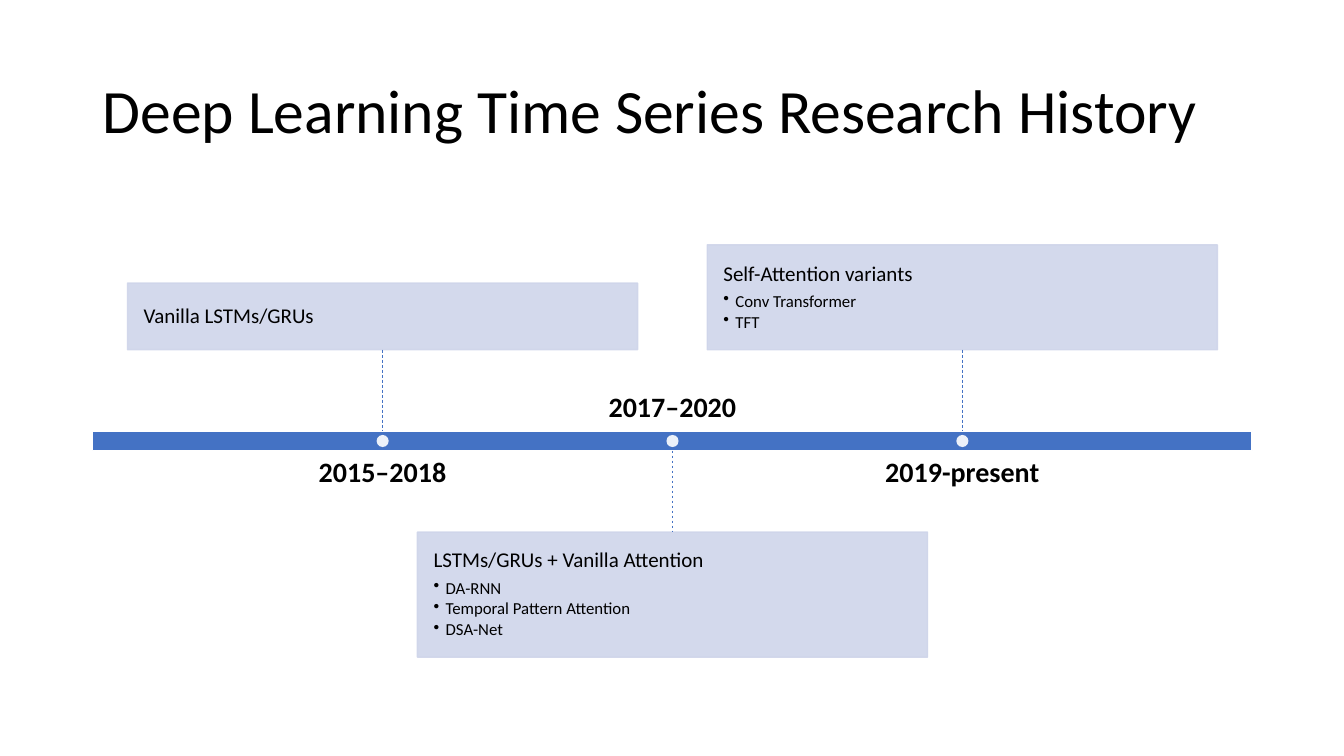
from lxml import etree
from pptx import Presentation
from pptx.dml.color import RGBColor
from pptx.enum.dml import MSO_LINE
from pptx.enum.shapes import MSO_CONNECTOR, MSO_SHAPE
from pptx.enum.text import MSO_ANCHOR, PP_ALIGN
from pptx.oxml.ns import qn
from pptx.util import Inches, Pt

RECTANGLE, OVAL = MSO_SHAPE.RECTANGLE, MSO_SHAPE.OVAL
STRAIGHT, DASH = MSO_CONNECTOR.STRAIGHT, MSO_LINE.DASH
TOP, MIDDLE, BOTTOM = MSO_ANCHOR.TOP, MSO_ANCHOR.MIDDLE, MSO_ANCHOR.BOTTOM
LEFT, CENTER = PP_ALIGN.LEFT, PP_ALIGN.CENTER
TOP_SIDE, BOTTOM_SIDE = 0, 2

FONT = "Calibri"
COLORS = {"text": "000000", "bar": "4472C4", "card": "CFD5EA", "white": "FFFFFF"}

SLIDE_WIDTH, SLIDE_HEIGHT = 13.33, 7.5
TITLE_BOX = (0.92, 0.4, 11.72, 1.45)
BAR_BOX = (0.92, 4.28, 11.5, 0.19)
CARD_WIDTH = BAR_BOX[2] * 0.44
DATE_WIDTH, DATE_HEIGHT = BAR_BOX[2] * 0.4, 0.54
DATE_GAP = 0.08
CONNECTOR_LENGTH = 0.81
DOT_SIZE = 0.12
CARD_INSET = 0.16
BULLET_INDENT = 0.12

# date, heading, bullets, card height, card above the bar
MILESTONES = [
    ("2015–2018", "Vanilla LSTMs/GRUs", [], 0.66, True),
    ("2017–2020", "LSTMs/GRUs + Vanilla Attention",
     ["DA-RNN", "Temporal Pattern Attention", "DSA-Net"], 1.24, False),
    ("2019-present", "Self-Attention variants", ["Conv Transformer", "TFT"], 1.04, True),
]


def color(name):
    return RGBColor.from_string(COLORS[name])


def set_opacity(fill_format, element, percent):
    """Make every solid colour inside the element partly transparent."""
    for solid in element.iter(qn("a:srgbClr")):
        alpha = etree.SubElement(solid, qn("a:alpha"))
        alpha.set("val", str(percent * 1000))


def add_block(slide, kind, box, fill, line=None, opacity=100):
    shape = slide.shapes.add_shape(kind, *map(Inches, box))
    shape.shadow.inherit = False
    shape.fill.solid()
    shape.fill.fore_color.rgb = color(fill)
    if line:
        shape.line.color.rgb = color(line)
        shape.line.width = Pt(1)
    else:
        shape.line.fill.background()
    if opacity < 100:
        set_opacity(shape.fill, shape.fill._xPr, opacity)
    return shape


def set_frame(text_frame, anchor, inset):
    text_frame.word_wrap = True
    text_frame.vertical_anchor = anchor
    text_frame.margin_left = text_frame.margin_right = Inches(inset)
    text_frame.margin_top = text_frame.margin_bottom = Inches(inset)


def format_paragraph(paragraph, size, space_after=0, align=LEFT, bold=False):
    paragraph.alignment = align
    paragraph.line_spacing = 0.9
    paragraph.space_before = Pt(0)
    paragraph.space_after = Pt(space_after)
    for run in paragraph.runs:
        run.font.name = FONT
        run.font.size = Pt(size)
        run.font.bold = bold
        run.font.color.rgb = color("text")


def add_bullet(paragraph):
    properties = paragraph._p.get_or_add_pPr()
    properties.set("marL", str(Inches(BULLET_INDENT)))
    properties.set("indent", str(-Inches(BULLET_INDENT)))
    etree.SubElement(properties, qn("a:buChar")).set("char", "•")


def add_label(slide, box, text, size, anchor, inset=0, **style):
    label = slide.shapes.add_textbox(*map(Inches, box))
    set_frame(label.text_frame, anchor, inset)
    label.text_frame.text = text
    format_paragraph(label.text_frame.paragraphs[0], size, **style)


def add_card(slide, box, heading, bullets):
    card = add_block(slide, RECTANGLE, box, "card", "card", opacity=90)
    set_frame(card.text_frame, MIDDLE, CARD_INSET)
    card.text_frame.text = "\n".join([heading, *bullets])
    first, *others = card.text_frame.paragraphs
    format_paragraph(first, 15, space_after=5)
    for paragraph in others:
        paragraph.level = 1
        format_paragraph(paragraph, 12, space_after=2)
        add_bullet(paragraph)
    return card


def add_dashed_line(slide, center, start, end):
    line = slide.shapes.add_connector(
        STRAIGHT, Inches(center), Inches(start), Inches(center), Inches(end))
    line.line.color.rgb = color("bar")
    line.line.width = Pt(0.5)
    line.line.dash_style = DASH
    etree.SubElement(line._element.spPr, qn("a:effectLst"))
    return line


def add_milestone(slide, bar, bar_box, share, milestone):
    """Place date, card, line and dot at a share of the bar's length."""
    date, heading, bullets, card_height, above = milestone
    left, top, width, height = bar_box
    center, bottom = left + width * share, top + height
    if above:
        line_start, line_end = top - CONNECTOR_LENGTH, top
        card_top = line_start - card_height
        date_top, date_anchor = bottom + DATE_GAP, TOP
    else:
        line_start, line_end = bottom, bottom + CONNECTOR_LENGTH
        card_top = line_end
        date_top, date_anchor = top - DATE_GAP - DATE_HEIGHT, BOTTOM

    add_label(slide, (center - DATE_WIDTH / 2, date_top, DATE_WIDTH, DATE_HEIGHT),
              date, 20, date_anchor, space_after=7, align=CENTER, bold=True)
    card = add_card(slide, (center - CARD_WIDTH / 2, card_top, CARD_WIDTH, card_height),
                    heading, bullets)
    line = add_dashed_line(slide, center, line_start, line_end)
    if above:
        line.begin_connect(card, BOTTOM_SIDE)
    else:
        line.end_connect(card, TOP_SIDE)
    if share == 0.5:
        if above:
            line.end_connect(bar, TOP_SIDE)
        else:
            line.begin_connect(bar, BOTTOM_SIDE)
    add_block(slide, OVAL, (center - DOT_SIZE / 2, top + (height - DOT_SIZE) / 2,
                            DOT_SIZE, DOT_SIZE), "white", opacity=90)


def add_timeline(slide, bar_box, milestones):
    bar = add_block(slide, RECTANGLE, bar_box, "bar", "white")
    for number, milestone in enumerate(milestones, start=1):
        add_milestone(slide, bar, bar_box, number / (len(milestones) + 1), milestone)


def main():
    presentation = Presentation()
    presentation.slide_width = Inches(SLIDE_WIDTH)
    presentation.slide_height = Inches(SLIDE_HEIGHT)
    slide = presentation.slides.add_slide(presentation.slide_layouts[6])
    add_label(slide, TITLE_BOX, "Deep Learning Time Series Research History",
              44, MIDDLE, inset=0.1)
    add_timeline(slide, BAR_BOX, MILESTONES)
    presentation.save("out.pptx")


if __name__ == "__main__":
    main()
